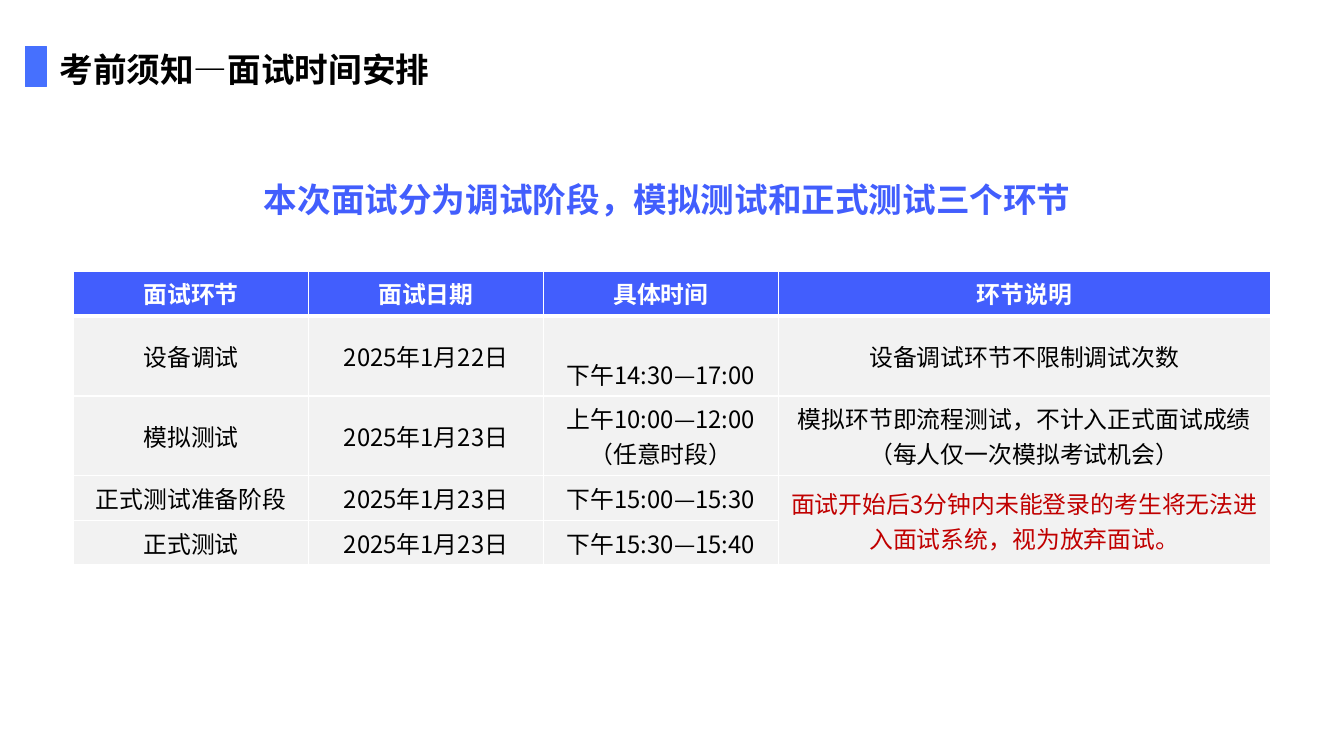
from lxml.etree import SubElement
from pptx import Presentation
from pptx.dml.color import RGBColor
from pptx.enum.shapes import MSO_SHAPE as SHAPE
from pptx.enum.text import MSO_ANCHOR as ANCHOR, MSO_AUTO_SIZE as AUTO, PP_ALIGN as ALIGN
from pptx.oxml.ns import qn
from pptx.util import Inches, Pt

WIDTH, HEIGHT = Inches(13.33), Inches(7.5)
BAR_BLUE = RGBColor(0x46, 0x70, 0xFE)
BLUE = RGBColor(0x42, 0x5E, 0xFD)
GREY = RGBColor(0xF2, 0xF2, 0xF2)
BLACK = RGBColor(0, 0, 0)
WHITE = RGBColor(0xFF, 0xFF, 0xFF)
RED = RGBColor(0xC0, 0, 0)
CJK = "Noto Sans CJK SC"

COLUMN_SHARES = [17.48, 17.48, 17.48, 36.61]
ROW_SHARES = [5.8, 10.53, 10.53, 5.8, 5.8]
SCHEDULE = [
    ["面试环节", "面试日期", "具体时间", "环节说明"],
    ["设备调试", "2025年1月22日", "下午14:30—17:00", "设备调试环节不限制调试次数"],
    ["模拟测试", "2025年1月23日", "上午10:00—12:00（任意时段）",
     "模拟环节即流程测试，不计入正式面试成绩（每人仅一次模拟考试机会）"],
    ["正式测试准备阶段", "2025年1月23日", "下午15:00—15:30",
     "面试开始后3分钟内未能登录的考生将无法进入面试系统，视为放弃面试。"],
    ["正式测试", "2025年1月23日", "下午15:30—15:40", ""],
]


def across(share):
    return int(WIDTH * share / 100)


def down(share):
    return int(HEIGHT * share / 100)


def box(x, y, w, h):
    return across(x), down(y), across(w), down(h)


def write(tf, text, size=17, color=BLACK, bold=False, font=CJK, align=ALIGN.LEFT):
    p = tf.paragraphs[0]
    p.alignment = align
    r = p.add_run()
    r.text = text
    r.font.name = font
    r.font.size = Pt(size)
    r.font.bold = bold
    r.font.color.rgb = color
    SubElement(r.font._element, qn("a:ea")).set("typeface", CJK)


def add_title(s, text):
    sp = s.shapes.title
    sp.left, sp.top, sp.width, sp.height = box(3.68, 5.33, 47.11, 7.6)
    tf = sp.text_frame
    tf.auto_size = AUTO.NONE
    tf.vertical_anchor = ANCHOR.MIDDLE
    write(tf, text, size=24, bold=True)


def add_bar(s):
    sp = s.shapes.add_shape(SHAPE.RECTANGLE, *box(1.88, 6.13, 1.58, 5.33))
    sp.shadow.inherit = False
    sp.fill.solid()
    sp.fill.fore_color.rgb = BAR_BLUE
    sp.line.color.rgb = BAR_BLUE
    sp.line.width = Pt(1)


def add_heading(s, text):
    tf = s.shapes.add_textbox(*box(18.9, 23.07, 62.12, 6.67)).text_frame
    tf.word_wrap = True
    write(tf, text, size=24, color=BLUE, bold=True, font="Arial")


def set_borders(cell, top, bottom):
    tcPr = cell._tc.get_or_add_tcPr()
    for side, width in (("L", 1), ("R", 1), ("T", top), ("B", bottom)):
        ln = SubElement(tcPr, qn(f"a:ln{side}"), w=str(Pt(width)))
        fill = SubElement(ln, qn("a:solidFill"))
        SubElement(fill, qn("a:srgbClr"), val=str(WHITE))


def add_schedule(s):
    x, y, w, h = box(5.48, 35.87, sum(COLUMN_SHARES), sum(ROW_SHARES))
    table = s.shapes.add_table(len(SCHEDULE), len(COLUMN_SHARES), x, y, w, h).table
    for column, share in zip(table.columns, COLUMN_SHARES):
        column.width = across(share)
    for row, share in zip(table.rows, ROW_SHARES):
        row.height = down(share)
    for i, texts in enumerate(SCHEDULE):
        header = i == 0
        for j, text in enumerate(texts):
            cell = table.cell(i, j)
            set_borders(cell, top=3 if i == 1 else 1, bottom=3 if header else 1)
            cell.fill.solid()
            cell.fill.fore_color.rgb = BLUE if header else GREY
            cell.vertical_anchor = ANCHOR.MIDDLE
            if text:
                color = WHITE if header else RED if (i, j) == (3, 3) else BLACK
                write(cell.text_frame, text, color=color, bold=header, align=ALIGN.CENTER)
    table.cell(1, 2).margin_top = Inches(0.4)
    table.cell(3, 3).merge(table.cell(4, 3))


def main():
    prs = Presentation()
    prs.slide_width, prs.slide_height = WIDTH, HEIGHT
    s = prs.slides.add_slide(prs.slide_layouts[5])
    add_bar(s)
    add_title(s, "考前须知—面试时间安排")
    add_schedule(s)
    add_heading(s, "本次面试分为调试阶段，模拟测试和正式测试三个环节")
    prs.save("out.pptx")


if __name__ == "__main__":
    main()
